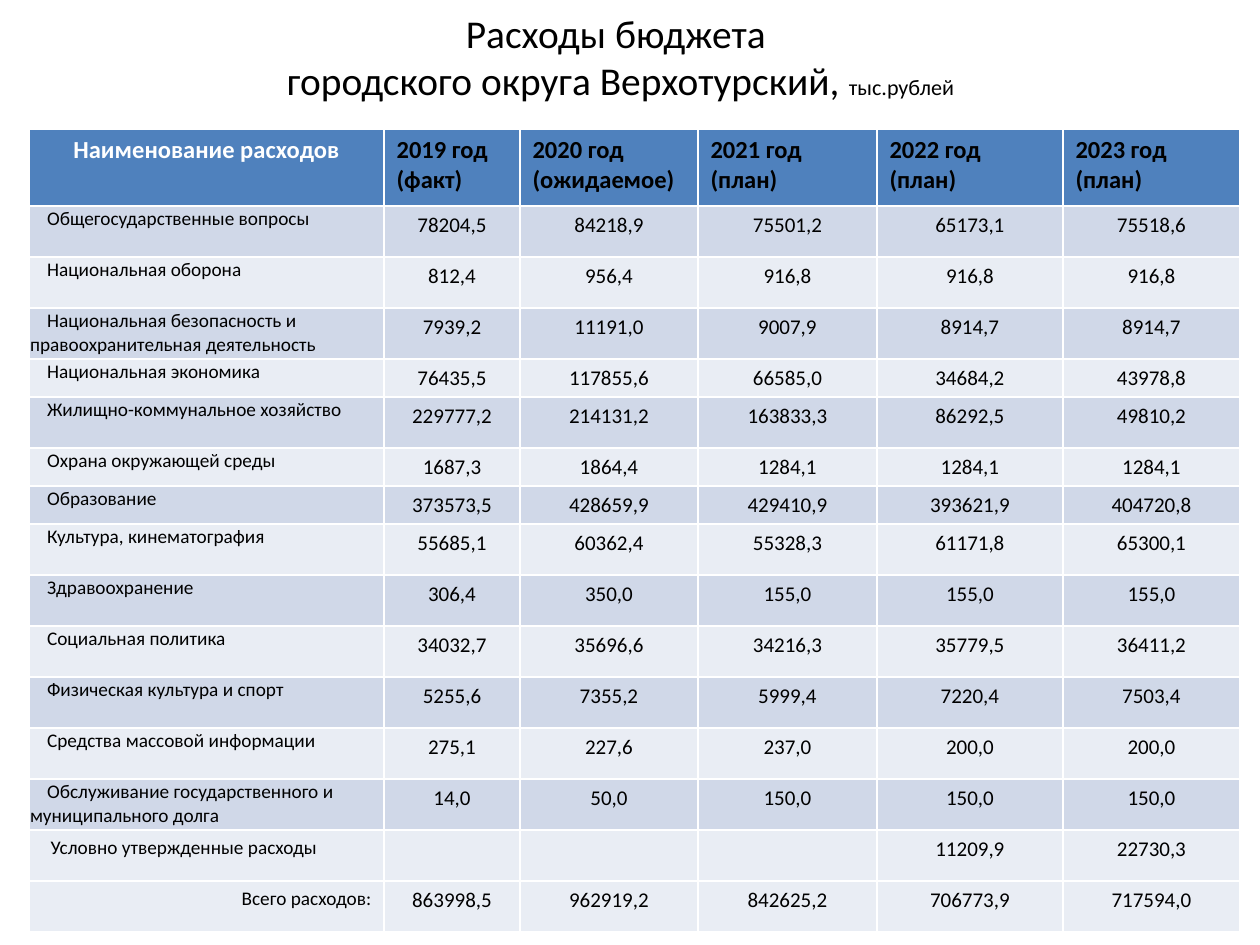
from pptx import Presentation
from pptx.dml.color import RGBColor
from pptx.enum.text import MSO_ANCHOR, PP_ALIGN
from pptx.util import Pt

PX = 914400 // 126
LEFT, MID, RIGHT = PP_ALIGN.LEFT, PP_ALIGN.CENTER, PP_ALIGN.RIGHT
MIDDLE = MSO_ANCHOR.MIDDLE

COLORS = {
    "text": "000000",
    "light": "FFFFFF",
    "head": "4F81BD",
    "odd": "D0D8E8",
    "even": "E9EDF4",
}

COLS = [355, 136, 178, 179, 186, 177]
HEAD = ["Наименование расходов", "2019 год (факт)", "2020 год (ожидаемое)",
        "2021 год (план)", "2022 год (план)", "2023 год (план)"]
HEAD_H, TALL, LOW = 77, 51, 38

# Row height, name, values by year
ROWS = [
    (TALL, "Общегосударственные вопросы", "78204,5 84218,9 75501,2 65173,1 75518,6"),
    (TALL, "Национальная оборона", "812,4 956,4 916,8 916,8 916,8"),
    (TALL, "Национальная безопасность и правоохранительная деятельность",
     "7939,2 11191,0 9007,9 8914,7 8914,7"),
    (LOW, "Национальная экономика", "76435,5 117855,6 66585,0 34684,2 43978,8"),
    (TALL, "Жилищно-коммунальное хозяйство", "229777,2 214131,2 163833,3 86292,5 49810,2"),
    (LOW, "Охрана окружающей среды", "1687,3 1864,4 1284,1 1284,1 1284,1"),
    (LOW, "Образование", "373573,5 428659,9 429410,9 393621,9 404720,8"),
    (TALL, "Культура, кинематография", "55685,1 60362,4 55328,3 61171,8 65300,1"),
    (TALL, "Здравоохранение", "306,4 350,0 155,0 155,0 155,0"),
    (TALL, "Социальная политика", "34032,7 35696,6 34216,3 35779,5 36411,2"),
    (TALL, "Физическая культура и спорт", "5255,6 7355,2 5999,4 7220,4 7503,4"),
    (TALL, "Средства массовой информации", "275,1 227,6 237,0 200,0 200,0"),
    (TALL, "Обслуживание государственного и муниципального долга",
     "14,0 50,0 150,0 150,0 150,0"),
    (TALL, "Условно утвержденные расходы", "11209,9 22730,3"),
    (TALL, "Всего расходов:", "863998,5 962919,2 842625,2 706773,9 717594,0"),
]
COND, TOTAL = len(ROWS) - 1, len(ROWS)


class Deck:
    def __init__(self, wide, high, font="Calibri"):
        self.font = font
        self.file = Presentation()
        self.file.slide_width, self.file.slide_height = wide * PX, high * PX
        self.slide = self.file.slides.add_slide(self.file.slide_layouts[6])

    def style(self, para, size, align, color="text", bold=False):
        para.alignment = align
        font = para.font
        font.name, font.size, font.bold = self.font, Pt(size), bold
        font.color.rgb = RGBColor.from_string(COLORS[color])

    def title(self, box, text, size, unit, small):
        frame = self.slide.shapes.add_textbox(*(n * PX for n in box)).text_frame
        frame.word_wrap = True
        frame.vertical_anchor = MIDDLE
        para = frame.paragraphs[0]
        para.text = text
        run = para.add_run()
        run.text = unit
        run.font.size = Pt(small)
        self.style(para, size, MID)

    def table(self, left, top, cols, rows):
        box = (left, top, sum(cols), sum(rows))
        grid = self.slide.shapes.add_table(
            len(rows), len(cols), *(n * PX for n in box)).table
        for col, wide in zip(grid.columns, cols):
            col.width = wide * PX
        for row, high in zip(grid.rows, rows):
            row.height = high * PX
        return grid

    def cell(self, cell, text, fill, size, align, color="text", bold=False, indent=0):
        cell.fill.solid()
        cell.fill.fore_color.rgb = RGBColor.from_string(COLORS[fill])
        if not text:
            return
        cell.text = text
        para = cell.text_frame.paragraphs[0]
        if indent:
            props = para._p.get_or_add_pPr()
            props.set("marL", "0")
            props.set("indent", str(indent * PX))
        self.style(para, size, align, color, bold)

    def tight(self, cell):
        cell.margin_left = cell.margin_right = cell.margin_top = PX
        cell.margin_bottom = 0


def main():
    deck = Deck(1260, 945)

    # Title with the unit in small type
    deck.title((20, 0, 1201, 113),
               "Расходы бюджета \vгородского округа Верхотурский, ", 22.5,
               "тыс.рублей", 12.6)

    # Header row
    grid = deck.table(29, 129, COLS, [HEAD_H] + [row[0] for row in ROWS])
    for c, text in enumerate(HEAD):
        align, color = (LEFT, "text") if c else (MID, "light")
        deck.cell(grid.cell(0, c), text, "head", 14, align, color, True)

    # Expense rows, banded down to the total
    for r, (_, name, values) in enumerate(ROWS, 1):
        fill = "odd" if r % 2 and r < TOTAL else "even"
        label = grid.cell(r, 0)
        if r < COND:
            deck.tight(label)
        indent = 17 if r < COND else 9 if r == COND else 0
        deck.cell(label, name, fill, 11, RIGHT if r == TOTAL else LEFT, indent=indent)
        nums = values.split()
        nums = [""] * (len(COLS) - 1 - len(nums)) + nums
        for c, num in enumerate(nums, 1):
            deck.cell(grid.cell(r, c), num, fill, 12, MID)

    deck.file.save("out.pptx")


if __name__ == "__main__":
    main()
